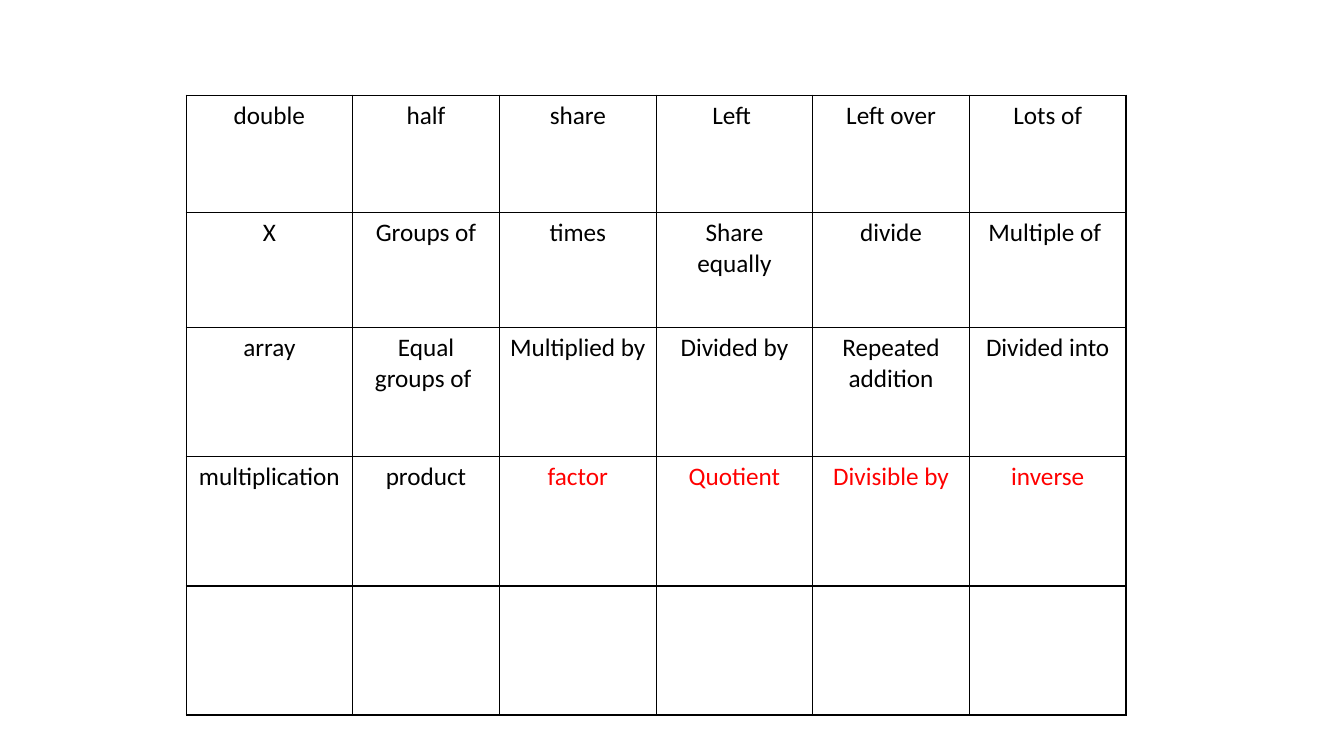
from pptx import Presentation
from pptx.dml.color import RGBColor
from pptx.enum import text
from pptx.oxml import parse_xml
from pptx.oxml import ns
from pptx.util import Pt

BLACK, RED, WHITE = "000000", "FF0000", "FFFFFF"
WORDS = [
    ["double", "half", "share", "Left ", "Left over", "Lots of"],
    ["X", "Groups of", "times", "Share equally", "divide", "Multiple of "],
    ["array", "Equal groups of ", "Multiplied by", "Divided by",
     "Repeated addition", "Divided into"],
    ["multiplication", "product", "factor", "Quotient", "Divisible by", "inverse"],
    [""] * 6,
]
RED_WORDS = {"factor", "Quotient", "Divisible by", "inverse"}
COLUMN_WIDTHS = [118.8, 105] + [111.9] * 4
ROW_HEIGHTS = [84, 82.2] + [92.2] * 3


def color(hex_code):
    return RGBColor.from_string(hex_code)


class VocabularySlide:
    font, size, border = "Calibri", 18, 1

    def __init__(self, prs):
        self.s = prs.slides.add_slide(prs.slide_layouts[6])

    def table(self, left, top, widths, heights, words):
        frame = self.s.shapes.add_table(
            len(heights), len(widths), Pt(left), Pt(top),
            Pt(sum(widths)), Pt(sum(heights)))
        table = frame.table
        table.first_row = table.horz_banding = False
        for column, width in zip(table.columns, widths):
            column.width = Pt(width)
        for row, height, row_words in zip(table.rows, heights, words):
            row.height = Pt(height)
            for cell, word in zip(row.cells, row_words):
                self.cell(cell, word)

    def cell(self, cell, word):
        self.borders(cell)
        cell.fill.solid()
        cell.fill.fore_color.rgb = color(WHITE)
        p = cell.text_frame.paragraphs[0]
        p.text = word
        p.alignment = text.PP_ALIGN.CENTER
        p.font.name = self.font
        p.font.size = Pt(self.size)
        p.font.color.rgb = color(RED if word in RED_WORDS else BLACK)

    def borders(self, cell):
        """Draw all four cell borders; must run before the fill is set."""
        properties = cell._tc.get_or_add_tcPr()
        for side in "LRTB":
            properties.append(parse_xml(
                f'<a:ln{side} {ns.nsdecls("a")} w="{Pt(self.border)}">'
                f'<a:solidFill><a:srgbClr val="{BLACK}"/></a:solidFill>'
                f'</a:ln{side}>'))


def main():
    prs = Presentation()
    prs.slide_width, prs.slide_height = Pt(960), Pt(540)
    slide = VocabularySlide(prs)
    slide.table(133, 68, COLUMN_WIDTHS, ROW_HEIGHTS, WORDS)
    prs.save("out.pptx")


if __name__ == "__main__":
    main()
